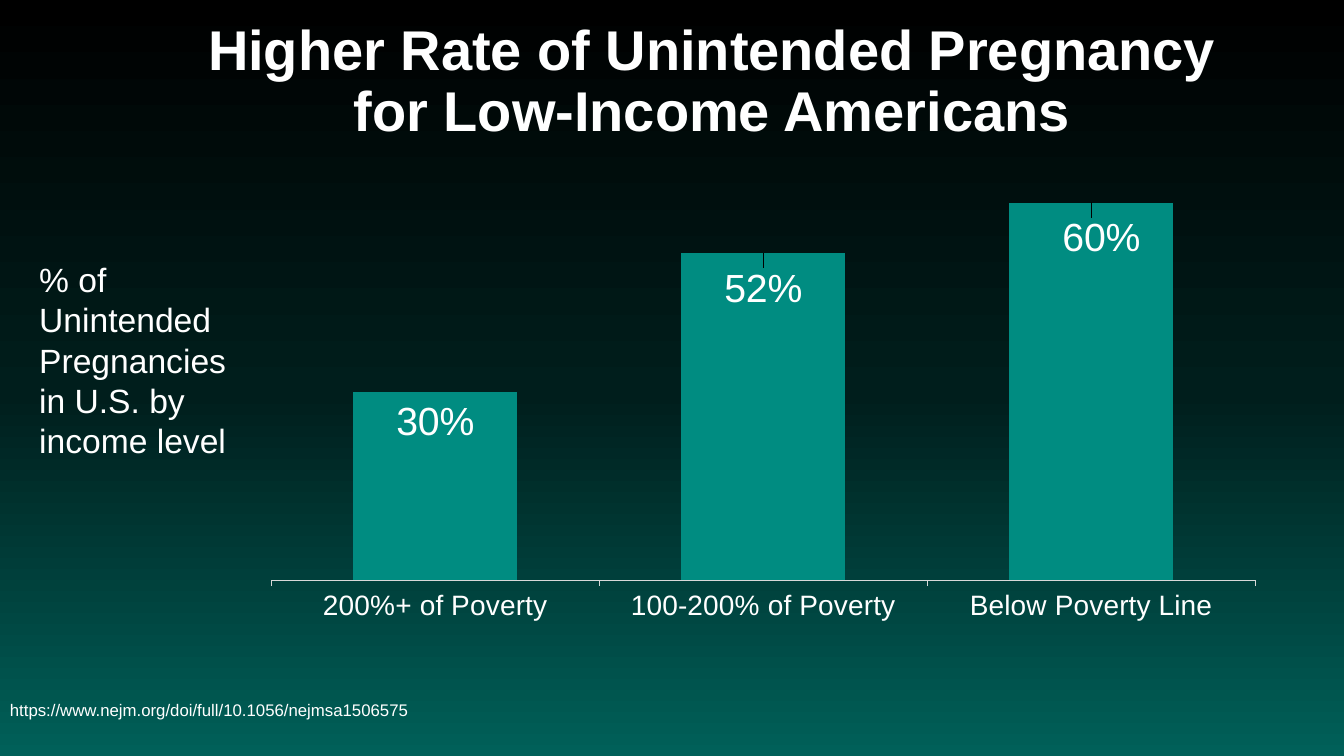
"""Build a slide charting unintended pregnancy rates by income level."""
import copy
from dataclasses import dataclass

import lxml.etree
import pptx
import pptx.chart.data
import pptx.dml.color
import pptx.enum.chart
import pptx.enum.text
import pptx.oxml.ns
import pptx.util
from pptx.util import Inches

FONT = "Arial"
WHITE = "FFFFFF"
TEAL = "008C81"
AXIS_GREY = "D9D9D9"
BACKDROP = ((0, "000000"), (0.52, "001E1C"), (1, "006059"))


@dataclass
class Caption:
    text: str
    left: float
    top: float
    width: float
    height: float
    size: int
    bold: bool = False
    align: pptx.enum.text.PP_ALIGN = pptx.enum.text.PP_ALIGN.LEFT
    anchor: pptx.enum.text.MSO_ANCHOR = pptx.enum.text.MSO_ANCHOR.MIDDLE
    line_spacing: float = 1.0
    space_after: int = 0


@dataclass
class IncomeGroup:
    name: str
    rate: float
    label_dx: float
    label_dy: float


CAPTIONS = (
    Caption("Higher Rate of Unintended Pregnancy\nfor Low-Income Americans",
            1.31, 0.39, 11.5, 0.86, 40, bold=True,
            align=pptx.enum.text.PP_ALIGN.CENTER, line_spacing=0.9),
    Caption("https://www.nejm.org/doi/full/10.1056/nejmsa1506575",
            0, 6.58, 9, 0.92, 12),
    Caption("% of Unintended Pregnancies\nin U.S. by income level",
            0.29, 2.52, 2.45, 2.12, 24,
            anchor=pptx.enum.text.MSO_ANCHOR.TOP, space_after=12),
)
INCOME_GROUPS = (
    IncomeGroup("200%+ of Poverty", 0.3, 0, 0.01),
    IncomeGroup("100-200% of Poverty", 0.52, 0, 0.02),
    IncomeGroup("Below Poverty Line", 0.6, 0.01, 0.02),
)


def color(value: str) -> pptx.dml.color.RGBColor:
    return pptx.dml.color.RGBColor.from_string(value)


def style_font(font, size: int, bold: bool = False) -> None:
    font.name = FONT
    font.size = pptx.util.Pt(size)
    font.bold = bold
    font.color.rgb = color(WHITE)


def paint_backdrop(slide) -> None:
    fill = slide.background.fill
    fill.gradient()
    fill.gradient_angle = 270
    stops = next(slide.element.iter(pptx.oxml.ns.qn("a:gsLst")))
    stops.insert(1, copy.deepcopy(stops[0]))
    for stop, (position, value) in zip(fill.gradient_stops, BACKDROP):
        stop.position = position
        stop.color.rgb = color(value)


def add_caption(slide, caption: Caption) -> None:
    box = slide.shapes.add_textbox(Inches(caption.left), Inches(caption.top),
                                   Inches(caption.width), Inches(caption.height))
    frame = box.text_frame
    frame.word_wrap = True
    frame.vertical_anchor = caption.anchor
    paragraph = frame.paragraphs[0]
    paragraph.text = caption.text
    paragraph.alignment = caption.align
    paragraph.line_spacing = caption.line_spacing
    paragraph.space_after = pptx.util.Pt(caption.space_after)
    style_font(paragraph.font, caption.size, caption.bold)


def set_layout(layout, **values) -> None:
    manual = lxml.etree.SubElement(layout, pptx.oxml.ns.qn("c:manualLayout"))
    for tag, value in values.items():
        lxml.etree.SubElement(manual, pptx.oxml.ns.qn(f"c:{tag}"), val=str(value))


def fix_plot_area(chart) -> None:
    plot_area = next(chart.element.iter(pptx.oxml.ns.qn("c:plotArea")))
    layout_tag = pptx.oxml.ns.qn("c:layout")
    for layout in plot_area.findall(layout_tag):
        plot_area.remove(layout)
    layout = lxml.etree.Element(layout_tag)
    plot_area.insert(0, layout)
    set_layout(layout, layoutTarget="inner", xMode="edge", yMode="edge",
               x=0.014, y=0, w=0.971, h=0.858)


def add_rate_labels(series) -> None:
    for index, group in enumerate(INCOME_GROUPS):
        label = series.points[index].data_label
        style_font(label.font, 28)
        label.position = pptx.enum.chart.XL_LABEL_POSITION.INSIDE_END
    for entry, group in zip(series.data_labels.element.findall(pptx.oxml.ns.qn("c:dLbl"))
                            if hasattr(series.data_labels, "element")
                            else list(series.format.element.iter(pptx.oxml.ns.qn("c:dLbl")))
                            if hasattr(series.format, "element")
                            else [], INCOME_GROUPS):
        set_layout(entry, x=group.label_dx, y=group.label_dy)


def place_rate_labels(chart) -> None:
    series = chart.plots[0].series[0]
    for point_index in range(len(INCOME_GROUPS)):
        label = series.points[point_index].data_label
        style_font(label.font, 28)
        label.position = pptx.enum.chart.XL_LABEL_POSITION.INSIDE_END
    entries = chart.element.iter(pptx.oxml.ns.qn("c:dLbl"))
    for entry, group in zip(entries, INCOME_GROUPS):
        layout = lxml.etree.Element(pptx.oxml.ns.qn("c:layout"))
        entry.insert(1, layout)
        set_layout(layout, x=group.label_dx, y=group.label_dy)


def add_rate_chart(slide) -> None:
    rates = pptx.chart.data.CategoryChartData(number_format="0%")
    rates.categories = [group.name for group in INCOME_GROUPS]
    rates.add_series("Series 1", [group.rate for group in INCOME_GROUPS])
    chart = slide.shapes.add_chart(
        pptx.enum.chart.XL_CHART_TYPE.COLUMN_CLUSTERED,
        Inches(2.55), Inches(1.39), Inches(10.05), Inches(5.09), rates).chart
    chart.has_legend = False
    chart.has_title = False
    style_font(chart.font, 10)

    columns = chart.plots[0]
    columns.gap_width = 100
    columns.vary_by_categories = False
    column_fill = columns.series[0].format.fill
    column_fill.solid()
    column_fill.fore_color.rgb = color(TEAL)

    income_axis = chart.category_axis
    income_axis.major_tick_mark = pptx.enum.chart.XL_TICK_MARK.OUTSIDE
    income_axis.format.line.color.rgb = color(AXIS_GREY)
    income_axis.format.line.width = pptx.util.Pt(0.75)
    style_font(income_axis.tick_labels.font, 20)

    rate_axis = chart.value_axis
    rate_axis.minimum_scale = 0
    rate_axis.maximum_scale = 0.7
    rate_axis.has_major_gridlines = False
    rate_axis.visible = False

    fix_plot_area(chart)
    place_rate_labels(chart)


def main() -> None:
    deck = pptx.Presentation()
    deck.slide_width = Inches(13.33)
    deck.slide_height = Inches(7.5)
    slide = deck.slides.add_slide(deck.slide_layouts[6])
    paint_backdrop(slide)
    add_rate_chart(slide)
    for caption in CAPTIONS:
        add_caption(slide, caption)
    deck.save("out.pptx")


if __name__ == "__main__":
    main()
